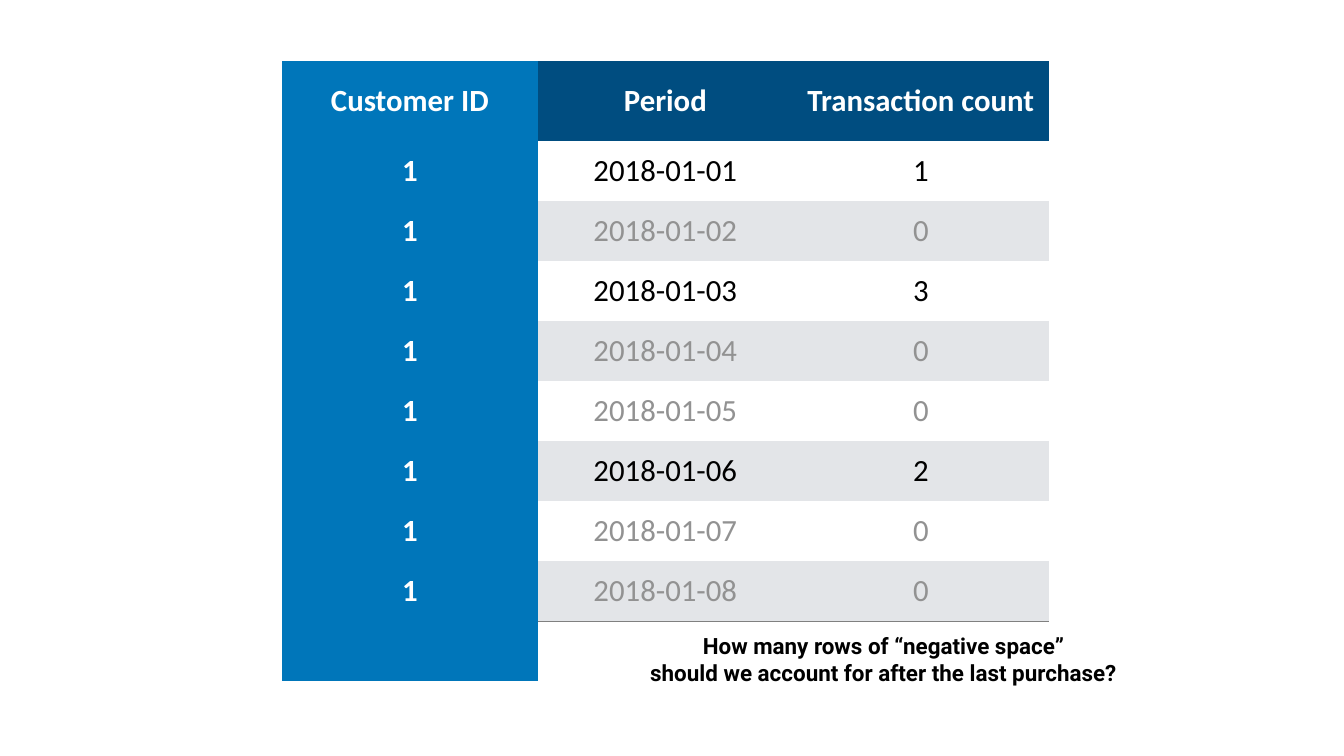
"""Build a slide with a customer transaction table and a question below it."""
from typing import NamedTuple

from lxml import etree
from pptx import Presentation
from pptx.dml.color import RGBColor
from pptx.enum import text
from pptx.oxml import ns
from pptx.util import Inches, Pt

COLORS = {
    "header": "004D80", "id": "0076BA", "band": "E3E5E8", "white": "FFFFFF",
    "black": "000000", "muted": "929292", "rule": "808080",
}
NO_STYLE = "{2D5ABB26-0587-4C30-8999-92F81FD0307C}"
HEADERS = ("Customer ID", "Period", "Transaction count")
COUNTS = (1, 0, 3, 0, 0, 2, 0, 0)
QUESTION = ("How many rows of “negative space”",
            "should we account for after the last purchase?")
COL_WIDTH, HEADER_HEIGHT, ROW_HEIGHT = 5.07, 1.59, 1.19


class CellLook(NamedTuple):
    fill: str
    color: str
    bold: bool


ID_LOOK = CellLook("id", "white", True)
HEADER_LOOK = CellLook("header", "white", True)


def rgb(name: str) -> RGBColor:
    return RGBColor.from_string(COLORS[name])


def set_margins(target, inches: float) -> None:
    for side in ("left", "right", "top", "bottom"):
        setattr(target, f"margin_{side}", Inches(inches))


def format_paragraph(p, face: str, size: int, color: str, bold: bool) -> None:
    p.alignment = text.PP_ALIGN.CENTER
    p.font.name, p.font.size, p.font.bold = face, Pt(size), bold
    p.font.color.rgb = rgb(color)


def fill_cell(cell, value: str, look: CellLook) -> None:
    cell.fill.solid()
    cell.fill.fore_color.rgb = rgb(look.fill)
    cell.vertical_anchor = text.MSO_ANCHOR.MIDDLE
    set_margins(cell, 0.06)
    p = cell.text_frame.paragraphs[0]
    p.text = value
    format_paragraph(p, "Calibri", 44, look.color, look.bold)


def add_top_rule(cell) -> None:
    ln = etree.Element(ns.qn("a:lnT"), w=str(Pt(1)))
    fill = etree.SubElement(ln, ns.qn("a:solidFill"))
    etree.SubElement(fill, ns.qn("a:srgbClr"), val=COLORS["rule"])
    cell._tc.get_or_add_tcPr().insert(0, ln)


def add_transactions(s) -> None:
    n_rows, n_cols = len(COUNTS) + 2, len(HEADERS)
    height = HEADER_HEIGHT + ROW_HEIGHT * (n_rows - 1)
    table = s.shapes.add_table(n_rows, n_cols, Inches(5.6), Inches(1.21),
                               Inches(COL_WIDTH * n_cols), Inches(height)).table
    table.horz_banding = False
    table.first_col = True
    table._tbl.tblPr.find(ns.qn("a:tableStyleId")).text = NO_STYLE
    for col in table.columns:
        col.width = Inches(COL_WIDTH)
    for i, row in enumerate(table.rows):
        row.height = Inches(ROW_HEIGHT if i else HEADER_HEIGHT)

    for c, title in enumerate(HEADERS):
        fill_cell(table.cell(0, c), title, HEADER_LOOK if c else ID_LOOK)
    for r, count in enumerate(COUNTS, start=1):
        look = CellLook("white" if r % 2 else "band",
                        "black" if count else "muted", False)
        for c, value in enumerate(("1", f"2018-01-{r:02}", str(count))):
            fill_cell(table.cell(r, c), value, look if c else ID_LOOK)
    for c in range(n_cols):
        cell = table.cell(n_rows - 1, c)
        fill_cell(cell, "", CellLook("white", "black", False) if c else ID_LOOK)
        if c:
            add_top_rule(cell)


def add_question(s) -> None:
    tf = s.shapes.add_textbox(Inches(12.52), Inches(12.46),
                              Inches(10.03), Inches(1.23)).text_frame
    tf.word_wrap = True
    tf.vertical_anchor = text.MSO_ANCHOR.MIDDLE
    set_margins(tf, 0.08)
    tf.text = "\n".join(QUESTION)
    for p in tf.paragraphs:
        format_paragraph(p, "Roboto", 32, "black", True)


def main() -> None:
    prs = Presentation()
    prs.slide_width, prs.slide_height = Inches(26.67), Inches(15)
    s = prs.slides.add_slide(prs.slide_layouts[6])
    add_transactions(s)
    add_question(s)
    prs.save("out.pptx")


if __name__ == "__main__":
    main()
